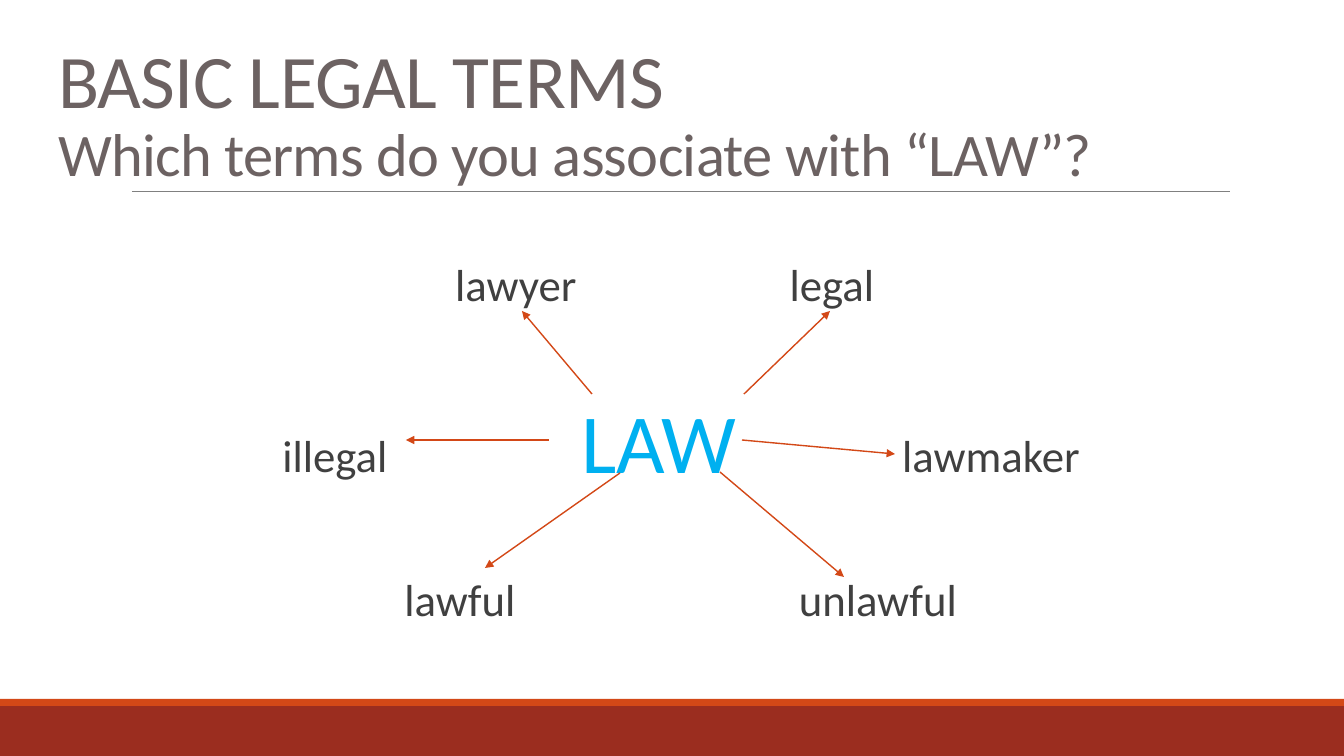
from lxml.etree import SubElement
from pptx import Presentation
from pptx.dml.color import RGBColor
from pptx.enum.shapes import MSO_CONNECTOR, MSO_SHAPE
from pptx.enum.text import MSO_ANCHOR, PP_ALIGN
from pptx.oxml.ns import qn
from pptx.util import Pt

EMU_PER_PX = 914400 / 100.8
WIDTH, HEIGHT = 1344, 756
DARK_RED = RGBColor(0x9B, 0x2D, 0x1F)
ORANGE = RGBColor(0xD3, 0x48, 0x17)
RULE_GRAY = RGBColor(0x80, 0x80, 0x80)
TITLE_GRAY = RGBColor(0x6C, 0x62, 0x62)
TEXT_GRAY = RGBColor(0x40, 0x40, 0x40)
SKY_BLUE = RGBColor(0x00, 0xB0, 0xF0)

TITLE_LINES = [
    ("BASIC LEGAL TERMS", 54),
    ("Which terms do you associate with “LAW”?", 43.2),
]
TERMS = [
    ("lawyer", 516, 257),
    ("legal", 832, 257),
    ("illegal", 335, 428),
    ("lawmaker", 991, 428),
    ("lawful", 460, 572),
    ("unlawful", 878, 572),
]
ARROWS = [
    ((744, 394), (830, 311)),
    ((742, 440), (895, 454)),
    ((720, 472), (844, 577)),
    ((620, 473), (485, 568)),
    ((549, 440), (406, 440)),
    ((592, 394), (522, 311)),
]


def px(value):
    return round(value * EMU_PER_PX)


class SlideBuilder:
    font = "Calibri"

    def __init__(self, presentation):
        self.slide = presentation.slides.add_slide(presentation.slide_layouts[6])

    def band(self, top, height, color):
        shape = self.slide.shapes.add_shape(
            MSO_SHAPE.RECTANGLE, 0, px(top), px(WIDTH), px(height))
        shape.shadow.inherit = False
        shape.fill.solid()
        shape.fill.fore_color.rgb = color
        shape.line.fill.background()

    def line(self, start, end, color, width, arrow=False):
        connector = self.slide.shapes.add_connector(
            MSO_CONNECTOR.STRAIGHT, *map(px, start + end))
        connector.line.color.rgb = color
        connector.line.width = Pt(width)
        properties = connector._element.spPr
        if arrow:
            SubElement(properties.find(qn("a:ln")), qn("a:tailEnd"), type="triangle")
        SubElement(properties, qn("a:effectLst"))

    def text_frame(self, left, top, width, height):
        shape = self.slide.shapes.add_textbox(*map(px, (left, top, width, height)))
        frame = shape.text_frame
        frame.word_wrap = True
        frame.margin_left = frame.margin_right = 0
        frame.margin_top = frame.margin_bottom = 0
        return frame

    def fill_paragraph(self, paragraph, text, size, color):
        run = paragraph.add_run()
        run.text = text
        paragraph.font.name = self.font
        paragraph.font.size = Pt(size)
        paragraph.font.color.rgb = color
        return run

    def title(self, lines):
        frame = self.text_frame(48, 31, 1182, 161)
        frame.margin_left = frame.margin_right = px(10)
        frame.margin_bottom = px(2)
        frame.vertical_anchor = MSO_ANCHOR.BOTTOM
        for index, (text, size) in enumerate(lines):
            paragraph = frame.add_paragraph() if index else frame.paragraphs[0]
            paragraph.line_spacing = 0.9
            run = self.fill_paragraph(paragraph, text, size, TITLE_GRAY)
            run._r.get_or_add_rPr().set("spc", "-50")

    def term(self, text, center, top, size=32, color=TEXT_GRAY):
        width = 200
        frame = self.text_frame(center - width // 2, top, width, round(size * 1.7))
        paragraph = frame.paragraphs[0]
        paragraph.alignment = PP_ALIGN.CENTER
        self.fill_paragraph(paragraph, text, size, color)


def main():
    presentation = Presentation()
    presentation.slide_width = px(WIDTH)
    presentation.slide_height = px(HEIGHT)
    builder = SlideBuilder(presentation)
    builder.band(706, 50, DARK_RED)
    builder.band(699, 7, ORANGE)
    builder.line((132, 191), (1230, 191), RULE_GRAY, 0.5)
    builder.title(TITLE_LINES)
    builder.term("LAW", 659, 390, 60, SKY_BLUE)
    for text, center, top in TERMS:
        builder.term(text, center, top)
    for start, end in ARROWS:
        builder.line(start, end, ORANGE, 1, arrow=True)
    presentation.save("out.pptx")


if __name__ == "__main__":
    main()
